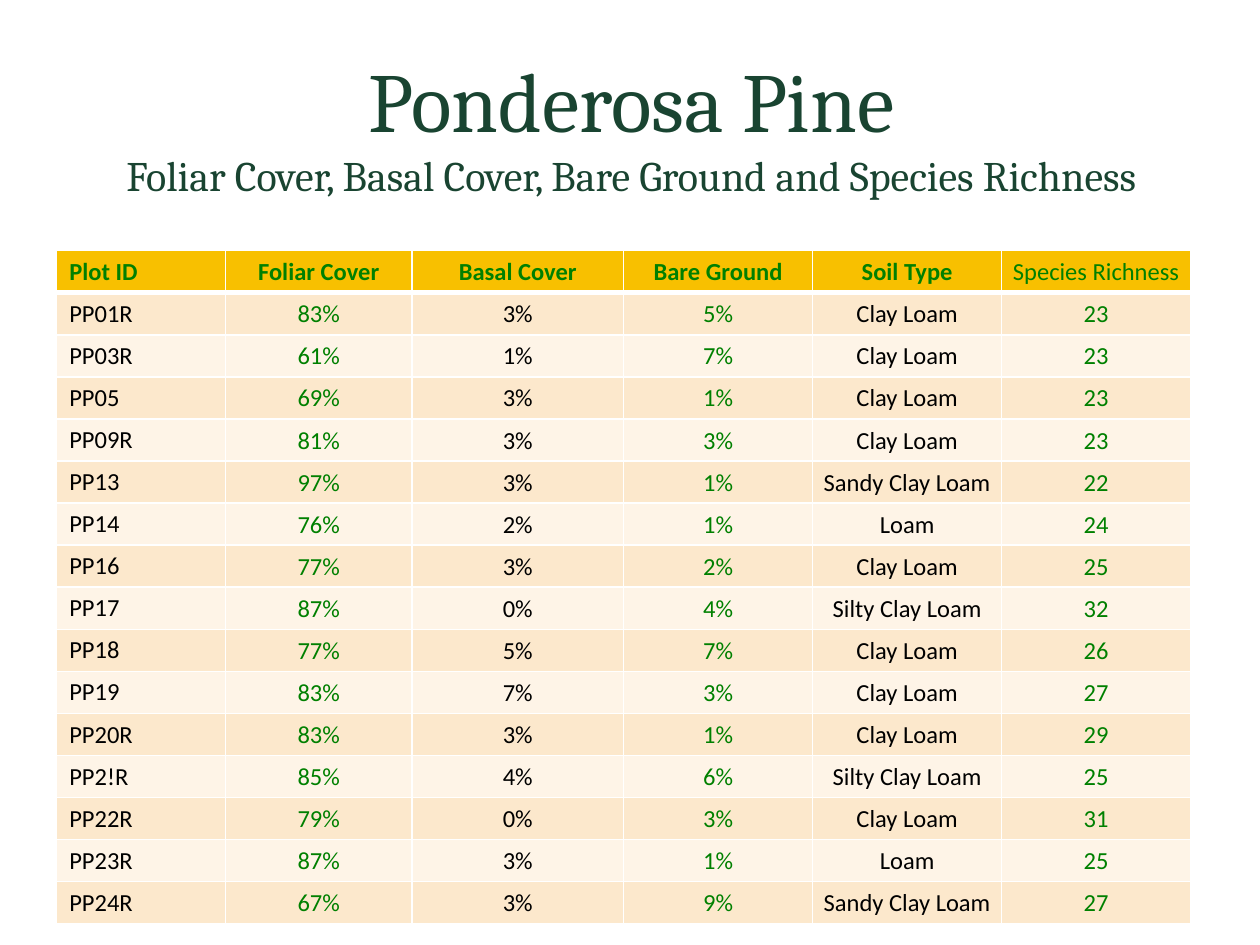
from lxml import etree
from pptx import Presentation
from pptx.dml.color import RGBColor
from pptx.enum.text import MSO_ANCHOR, PP_ALIGN
from pptx.oxml.ns import qn
from pptx.util import Inches, Pt

CENTER, LEFT = PP_ALIGN.CENTER, PP_ALIGN.LEFT
TOP, MIDDLE, BOTTOM = MSO_ANCHOR.TOP, MSO_ANCHOR.MIDDLE, MSO_ANCHOR.BOTTOM

HEADINGS = ["Plot ID", "Foliar Cover", "Basal Cover", "Bare Ground", "Soil Type", "Species Richness"]
PLOTS = [
    ("PP01R", "83%", "3%", "5%", "Clay Loam", "23"),
    ("PP03R", "61%", "1%", "7%", "Clay Loam", "23"),
    ("PP05", "69%", "3%", "1%", "Clay Loam", "23"),
    ("PP09R", "81%", "3%", "3%", "Clay Loam", "23"),
    ("PP13", "97%", "3%", "1%", "Sandy Clay Loam", "22"),
    ("PP14", "76%", "2%", "1%", "Loam", "24"),
    ("PP16", "77%", "3%", "2%", "Clay Loam", "25"),
    ("PP17", "87%", "0%", "4%", "Silty Clay Loam", "32"),
    ("PP18", "77%", "5%", "7%", "Clay Loam", "26"),
    ("PP19", "83%", "7%", "3%", "Clay Loam", "27"),
    ("PP20R", "83%", "3%", "1%", "Clay Loam", "29"),
    ("PP2!R", "85%", "4%", "6%", "Silty Clay Loam", "25"),
    ("PP22R", "79%", "0%", "3%", "Clay Loam", "31"),
    ("PP23R", "87%", "3%", "1%", "Loam", "25"),
    ("PP24R", "67%", "3%", "9%", "Sandy Clay Loam", "27"),
]
COLUMN_WIDTHS = [1.34, 1.48, 1.68, 1.5, 1.5, 1.5]
GREEN_COLUMNS = {1, 3, 5}
SOIL_COLUMN, RICHNESS_COLUMN = 4, 5


def color(hex_string):
    """Turn a hex string into a colour."""
    return RGBColor.from_string(hex_string)


class PlotReport:
    """Holds the report's style and its current slide."""

    heading_font, body_font = "Cambria", "Calibri"
    pine, green, black, white = "194431", "008000", "000000", "FFFFFF"
    gold, bands = "F8C000", ("FCE8CC", "FEF4E7")

    def __init__(self, deck):
        """Add a blank slide to the deck."""
        self.width, self.height = deck.slide_width, deck.slide_height
        self.slide = deck.slides.add_slide(deck.slide_layouts[6])

    def area(self, left, top, width, height):
        """Convert percentages of the slide into lengths."""
        return (int(self.width * left / 100), int(self.height * top / 100),
                int(self.width * width / 100), int(self.height * height / 100))

    def style(self, run, font, size, ink, bold=False):
        """Format one run."""
        run.font.name, run.font.size, run.font.bold = font, Pt(size), bold
        run.font.color.rgb = color(ink)

    def title(self, area, lines, sizes):
        """Place a centred title whose lines differ in size."""
        frame = self.slide.shapes.add_textbox(*self.area(*area)).text_frame
        frame.word_wrap = True
        frame.vertical_anchor = MIDDLE
        frame.text = "\v".join(lines)
        heading = frame.paragraphs[0]
        heading.alignment = CENTER
        for run, size in zip(heading.runs, sizes):
            self.style(run, self.heading_font, size, self.pine)

    def borders(self, cell, top, bottom):
        """Draw white cell borders of the given weights."""
        properties = cell._tc.get_or_add_tcPr()
        for side, weight in zip("LRTB", (1, 1, top, bottom)):
            line = etree.SubElement(properties, qn(f"a:ln{side}"), w=str(Pt(weight)))
            fill = etree.SubElement(line, qn("a:solidFill"))
            etree.SubElement(fill, qn("a:srgbClr"), val=self.white)

    def cell(self, cell, text, row, column):
        """Fill one cell by the rules of its row and column."""
        header = row == 0
        self.borders(cell, top=3 if row == 1 else 1, bottom=3 if header else 1)
        cell.fill.solid()
        cell.fill.fore_color.rgb = color(self.gold if header else self.bands[(row - 1) % 2])
        cell.text_frame.text = text
        entry = cell.text_frame.paragraphs[0]
        entry.alignment = CENTER if column else LEFT
        ink = self.green if header or column in GREEN_COLUMNS else self.black
        self.style(entry.runs[0], self.body_font, 14, ink, header and column != RICHNESS_COLUMN)
        if column >= (SOIL_COLUMN if header else 1):
            cell.vertical_anchor = MIDDLE
            cell.margin_left = cell.margin_right = cell.margin_top = Inches(0.01)
            cell.margin_bottom = 0
        else:
            cell.vertical_anchor = BOTTOM if header else TOP

    def table(self, area, records, widths, header_height, row_height):
        """Place a banded table with a heavier rule under its header."""
        place = self.area(*area)
        frame = self.slide.shapes.add_table(len(records), len(widths), *place)
        for column, width in zip(frame.table.columns, widths):
            column.width = Inches(width)
        for index, record in enumerate(records):
            frame.table.rows[index].height = Inches(row_height if index else header_height)
            for column, text in enumerate(record):
                self.cell(frame.table.cell(index, column), text, index, column)
        frame.height = place[3]


def main():
    """Build and save the report."""
    deck = Presentation()
    deck.slide_width, deck.slide_height = Inches(10), Inches(7.5)
    report = PlotReport(deck)
    report.title((2.3, 2.8, 95.6, 20.67),
                 ["Ponderosa Pine", "Foliar Cover, Basal Cover, Bare Ground and Species Richness"],
                 [48, 24])
    report.table((4.5, 26.53, 90, 71.07), [HEADINGS, *PLOTS], COLUMN_WIDTHS, 0.29, 0.31)
    deck.save("out.pptx")


if __name__ == "__main__":
    main()
